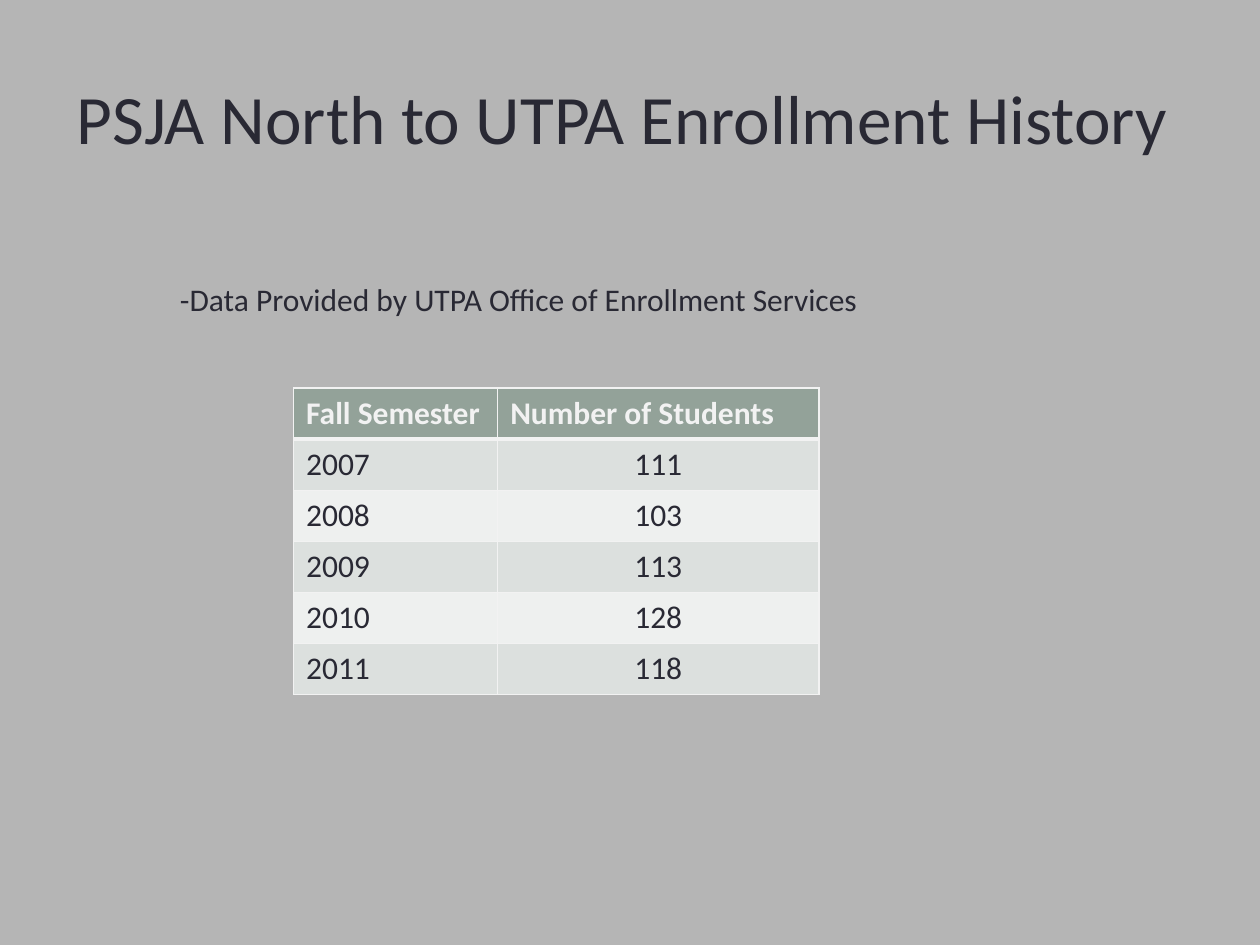
from lxml.etree import SubElement
from pptx import Presentation
from pptx.dml.color import RGBColor
from pptx.enum.text import MSO_ANCHOR as Anchor, PP_ALIGN as Align
from pptx.oxml.ns import qn
from pptx.util import Inches, Pt

BACKGROUND = RGBColor(0xB5, 0xB5, 0xB5)
INK = RGBColor(0x29, 0x29, 0x34)
LIGHT = RGBColor(0xF2, 0xF2, 0xF2)
HEADER_FILL = RGBColor(0x93, 0xA2, 0x99)
BAND_FILLS = [RGBColor(0xDC, 0xE0, 0xDE), RGBColor(0xEE, 0xF0, 0xEF)]

TITLE_FORMAT = {"name": "Calibri", "size": Pt(39.6), "bold": False}
BODY_FORMAT = {"name": "Calibri", "size": Pt(18), "bold": False}
HEADER_FORMAT = {**BODY_FORMAT, "bold": True}

ENROLLMENT = [
    ("Fall Semester", "Number of Students"),
    ("2007", "111"),
    ("2008", "103"),
    ("2009", "113"),
    ("2010", "128"),
    ("2011", "118"),
]
COLUMN_WIDTHS = [1.62, 2.55]


def write_text(frame, text, font_format, color, alignment=Align.LEFT):
    paragraph = frame.paragraphs[0]
    paragraph.alignment = alignment
    run = paragraph.add_run()
    run.text = text
    for name, value in font_format.items():
        setattr(run.font, name, value)
    run.font.color.rgb = color


def add_borders(cell, widths):
    properties = cell._tc.get_or_add_tcPr()
    for side, width in widths.items():
        line = SubElement(properties, qn(f"a:ln{side}"), w=str(Pt(width)))
        fill = SubElement(line, qn("a:solidFill"))
        SubElement(fill, qn("a:srgbClr"), val=str(LIGHT))


def place_title(slide, left, top, width, height):
    title = slide.shapes.title
    title.left, title.top, title.width, title.height = left, top, width, height
    title.text_frame.vertical_anchor = Anchor.MIDDLE
    write_text(title.text_frame, "PSJA North to UTPA Enrollment History ",
               TITLE_FORMAT, INK, Align.CENTER)


def place_source_note(slide, left, top, width, height):
    note = slide.shapes.add_textbox(left, top, width, height)
    note.text_frame.word_wrap = True
    write_text(note.text_frame,
               "-Data Provided by UTPA Office of Enrollment Services",
               BODY_FORMAT, INK)


def place_enrollment_table(slide, left, top, width, height):
    table = slide.shapes.add_table(
        len(ENROLLMENT), len(COLUMN_WIDTHS), left, top, width, height).table
    for column, column_width in zip(table.columns, COLUMN_WIDTHS):
        column.width = Inches(column_width)
    for row_index, values in enumerate(ENROLLMENT):
        is_header = row_index == 0
        fill = HEADER_FILL if is_header else BAND_FILLS[(row_index - 1) % 2]
        font_format = HEADER_FORMAT if is_header else BODY_FORMAT
        color = LIGHT if is_header else INK
        borders = {"L": 1, "R": 1, "T": 3 if row_index == 1 else 1,
                   "B": 3 if is_header else 1}
        for column_index, text in enumerate(values):
            cell = table.cell(row_index, column_index)
            centered = column_index == 1 and not is_header
            write_text(cell.text_frame, text, font_format, color,
                       Align.CENTER if centered else Align.LEFT)
            add_borders(cell, borders)
            cell.fill.solid()
            cell.fill.fore_color.rgb = fill


def main():
    presentation = Presentation()
    presentation.slide_width, presentation.slide_height = Inches(10), Inches(7.5)
    slide = presentation.slides.add_slide(presentation.slide_layouts[5])
    slide.background.fill.solid()
    slide.background.fill.fore_color.rgb = BACKGROUND
    place_title(slide, Inches(0.5), Inches(0.3), Inches(9), Inches(1.25))
    place_enrollment_table(
        slide, Inches(2.33), Inches(3.08), Inches(4.17), Inches(2.43))
    place_source_note(
        slide, Inches(1.33), Inches(2.17), Inches(5.67), Inches(0.4))
    presentation.save("out.pptx")


if __name__ == "__main__":
    main()
